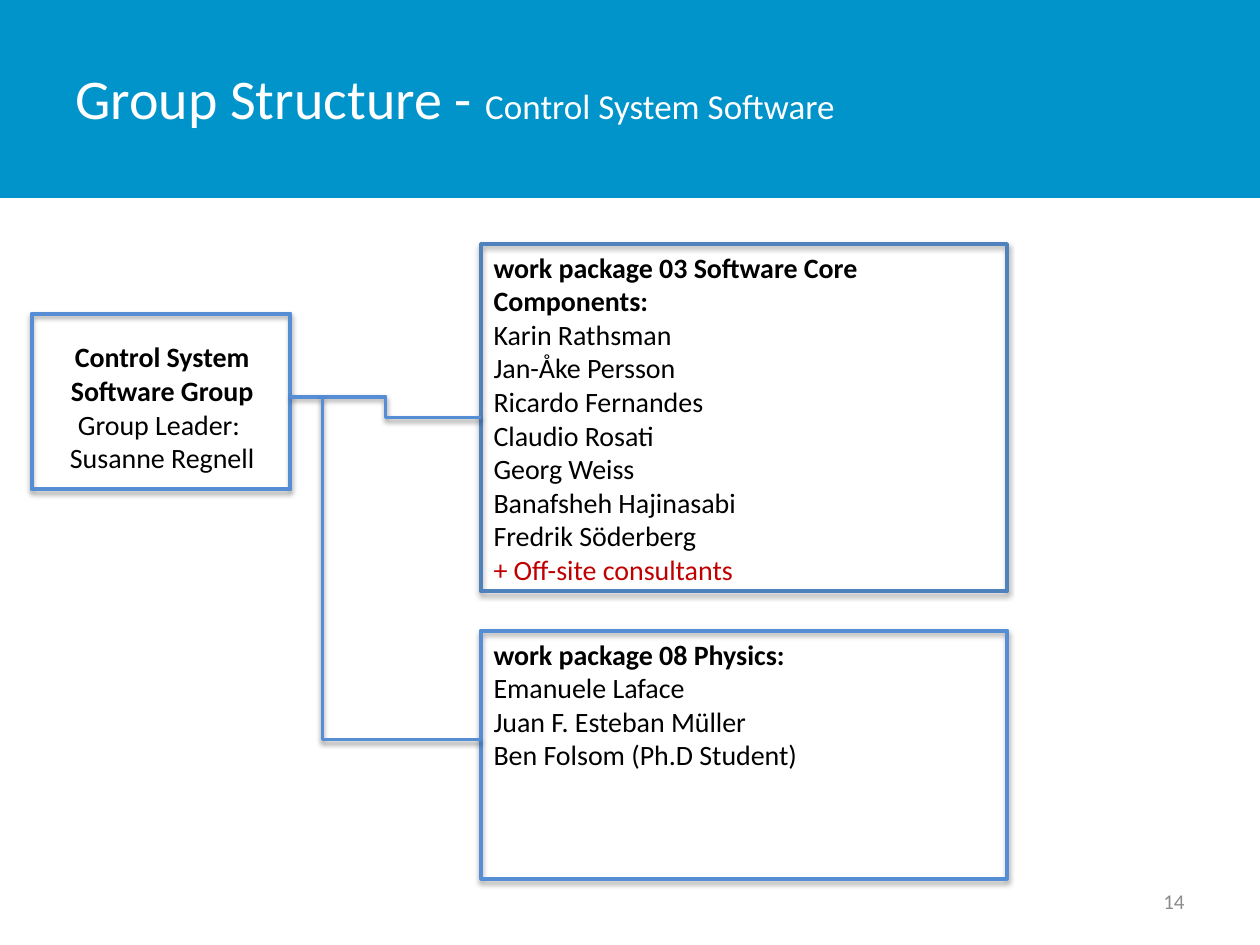
from lxml import etree
from pptx import Presentation
from pptx import util as u
from pptx.dml.color import RGBColor
from pptx.enum import shapes, text
from pptx.oxml import ns

COLORS = {"banner": "0094CA", "white": "FFFFFF", "black": "000000",
          "number": "8C8C8C", "accent": "C00000", "frame": "3D7CC7",
          "line": "558ED5", "core_line": "4F81BD"}
LEFT, CENTER, RIGHT = text.PP_ALIGN.LEFT, text.PP_ALIGN.CENTER, text.PP_ALIGN.RIGHT
TOP, MIDDLE = text.MSO_ANCHOR.TOP, text.MSO_ANCHOR.MIDDLE


def rgb(name):
    return RGBColor.from_string(COLORS[name])


def cm(*values):
    return [u.Cm(v) for v in values]


class Deck:
    font = "Calibri"

    def __init__(self, width, height):
        self.prs = Presentation()
        self.prs.slide_width, self.prs.slide_height = cm(width, height)
        self.s = self.prs.slides.add_slide(self.prs.slide_layouts[6])

    def shadow(self, sp, alpha, dist):
        """Give a shape or connector a soft shadow straight below it."""
        effects = etree.SubElement(sp._element.spPr, ns.qn("a:effectLst"))
        outer = etree.SubElement(effects, ns.qn("a:outerShdw"), blurRad=str(u.Pt(3.1)),
                                 dist=str(u.Pt(dist)), dir="5400000", rotWithShape="0")
        color = etree.SubElement(outer, ns.qn("a:srgbClr"), val=COLORS["black"])
        etree.SubElement(color, ns.qn("a:alpha"), val=str(alpha * 1000))

    def banner(self, box):
        sp = self.s.shapes.add_shape(shapes.MSO_SHAPE.RECTANGLE, *cm(*box))
        sp.shadow.inherit = False
        sp.fill.solid()
        sp.fill.fore_color.rgb = rgb("banner")
        sp.line.fill.background()

    def text(self, box, paragraphs, align=LEFT, anchor=TOP, parent=None):
        """Each paragraph is a list of (text, size, color, bold) runs."""
        tf = (parent or self.s).shapes.add_textbox(*cm(*box)).text_frame
        tf.word_wrap = True
        tf.vertical_anchor = anchor
        for i, runs in enumerate(paragraphs):
            p = tf.paragraphs[0] if i == 0 else tf.add_paragraph()
            p.alignment = align
            for words, size, color, bold in runs:
                r = p.add_run()
                r.text = words
                r.font.color.rgb = rgb(color)
                style = {"name": self.font, "size": u.Pt(size), "bold": bold}
                for key, value in style.items():
                    setattr(r.font, key, value)

    def card(self, box, text_box, heading, lines, line="line", align=LEFT, note=None):
        """Group a framed box with a bold heading, plain lines and a red note."""
        group = self.s.shapes.add_group_shape()
        sp = group.shapes.add_shape(shapes.MSO_SHAPE.FRAME, *cm(*box))
        sp.adjustments[0] = 0
        sp.fill.solid()
        sp.fill.fore_color.rgb = rgb("frame")
        sp.line.color.rgb = rgb(line)
        sp.line.width = u.Pt(2.25)
        self.shadow(sp, 35, 1.8)
        paragraphs = [[(heading, 16, "black", True)]]
        paragraphs += [[(words, 16, "black", False)] for words in lines]
        if note:
            paragraphs.append([(note, 16, "accent", False)])
        self.text(text_box, paragraphs, align, parent=group)

    def elbow(self, start, end, bend):
        """Bend is the share of the width at which the line turns down."""
        cxn = self.s.shapes.add_connector(shapes.MSO_CONNECTOR.ELBOW, *cm(*start, *end))
        cxn.line.color.rgb = rgb("line")
        cxn.line.width = u.Pt(2)
        guides = cxn._element.spPr.find(ns.qn("a:prstGeom")).get_or_add_avLst()
        etree.SubElement(guides, ns.qn("a:gd"), name="adj1",
                         fmla=f"val {int(bend * 100000)}")
        self.shadow(cxn, 38, 1.6)


def main():
    deck = Deck(25.4, 19.05)
    deck.banner((0, 0, 25.4, 3.99))
    deck.text((1.27, 0.36, 19.84, 3.18),
              [[("Group Structure - ", 32, "white", False),
                ("Control System Software", 20, "white", False)]], anchor=MIDDLE)
    deck.text((18.2, 17.66, 5.93, 1.01), [[("14", 12, "number", False)]], RIGHT, MIDDLE)

    deck.card((0.65, 6.33, 5.2, 3.53), (0.3, 6.73, 5.94, 3),
              "Control System Software Group",
              ["Group Leader: ", "Susanne Regnell"], align=CENTER)
    left, width = 9.7, 10.6
    deck.card((left, 12.72, width, 5), (left, 12.72, 9.8, 4.37),
              "work package 08 Physics:",
              ["Emanuele Laface", "Juan F. Esteban Müller", "Ben Folsom (Ph.D Student)"])
    deck.card((left, 4.92, width, 6.99), (left, 4.92, 10, 7.09),
              "work package 03 Software Core Components:",
              ["Karin Rathsman", "Jan-Åke Persson", "Ricardo Fernandes", "Claudio Rosati",
               "Georg Weiss", "Banafsheh Hajinasabi", "Fredrik Söderberg"],
              line="core_line", note="+ Off-site consultants")

    deck.elbow((5.85, 8), (left, 8.42), 0.5)
    deck.elbow((6.5, 8), (left, 14.91), 0)
    deck.prs.save("out.pptx")


if __name__ == "__main__":
    main()
